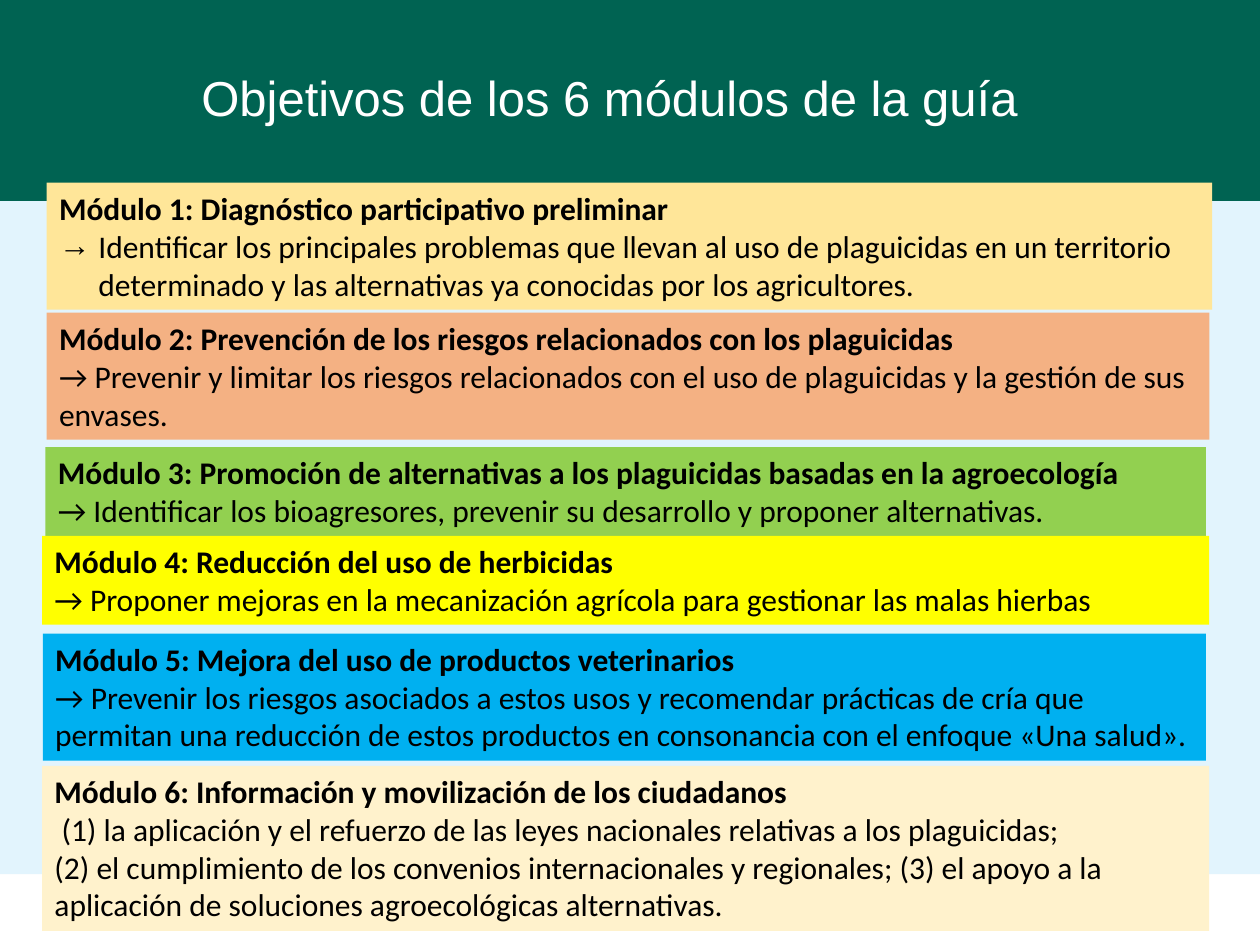
from lxml import etree
from pptx import Presentation
from pptx.dml.color import RGBColor
from pptx.enum.shapes import MSO_SHAPE
from pptx.enum.text import MSO_ANCHOR, MSO_AUTO_SIZE, PP_ALIGN
from pptx.oxml.ns import qn
from pptx.util import Pt

RECTANGLE = MSO_SHAPE.RECTANGLE
TOP, MIDDLE = MSO_ANCHOR.TOP, MSO_ANCHOR.MIDDLE
LEFT, CENTER = PP_ALIGN.LEFT, PP_ALIGN.CENTER
GROW, FIXED = MSO_AUTO_SIZE.SHAPE_TO_FIT_TEXT, MSO_AUTO_SIZE.NONE

TITLE_ONLY = 5
WIDTH, HEIGHT = 720, 540
HEADER_BOTTOM, PANEL_BOTTOM = 114.8, 499.5
LINE_HEIGHT, INSETS = 21.8, 7.2
HANGING = 22.5

COLORS = {
    "panel": "E2F4FD", "header": "006352", "white": "FFFFFF", "black": "000000",
    "sand": "FFE699", "orange": "F4B183", "green": "92D050",
    "yellow": "FFFF00", "blue": "00B0F0", "cream": "FFF2CC",
}

# Fill, left, top, width, number of text lines, heading, body paragraphs, bullet
MODULES = [
    ("sand", 26.64, 104.4, 666, 3, "Módulo 1: Diagnóstico participativo preliminar",
     ["Identificar los principales problemas que llevan al uso de plaguicidas en un "
      "territorio determinado y las alternativas ya conocidas por los agricultores."], "→"),
    ("orange", 26.64, 178.7, 664.4, 3,
     "Módulo 2: Prevención de los riesgos relacionados con los plaguicidas",
     ["→ Prevenir y limitar los riesgos relacionados con el uso de plaguicidas y la "
      "gestión de sus envases."], None),
    ("green", 26, 255.5, 663.1, 2,
     "Módulo 3: Promoción de alternativas a los plaguicidas basadas en la agroecología",
     ["→ Identificar los bioagresores, prevenir su desarrollo y proponer alternativas."],
     None),
    ("yellow", 24, 306.2, 666.9, 2, "Módulo 4: Reducción del uso de herbicidas",
     ["→ Proponer mejoras en la mecanización agrícola para gestionar las malas hierbas"],
     None),
    ("blue", 24.5, 362, 664.6, 3, "Módulo 5: Mejora del uso de productos veterinarios",
     ["→ Prevenir los riesgos asociados a estos usos y recomendar prácticas de cría que "
      "permitan una reducción de estos productos en consonancia con el enfoque "
      "«Una salud»."], None),
    ("cream", 24, 437.6, 666.9, 4, "Módulo 6: Información y movilización de los ciudadanos",
     [" (1) la aplicación y el refuerzo de las leyes nacionales relativas a los plaguicidas;",
      "(2) el cumplimiento de los convenios internacionales y regionales; (3) el apoyo a la "
      "aplicación de soluciones agroecológicas alternativas."], None),
]


def rgb(name):
    return RGBColor.from_string(COLORS[name])


def add_rectangle(page, fill, left, top, width, height):
    box = page.shapes.add_shape(RECTANGLE, Pt(left), Pt(top), Pt(width), Pt(height))
    box.shadow.inherit = False
    box.fill.solid()
    box.fill.fore_color.rgb = rgb(fill)
    box.line.fill.background()
    return box


def add_span(para, text, font, size, color, bold=False):
    span = para.add_run()
    span.text = text
    span.font.name = font
    span.font.size = Pt(size)
    span.font.bold = bold
    span.font.color.rgb = rgb(color)


def set_bullet(para, symbol):
    properties = para._p.get_or_add_pPr()
    properties.set("marL", str(Pt(HANGING)))
    properties.set("indent", str(-Pt(HANGING)))
    etree.SubElement(properties, qn("a:buFont"), typeface="Arial")
    etree.SubElement(properties, qn("a:buChar"), char=symbol)


def fill_title(page):
    title = page.shapes.title
    title.left, title.top, title.width, title.height = Pt(10.8), Pt(20.2), Pt(682.6), Pt(74.2)
    frame = title.text_frame
    frame.vertical_anchor = MIDDLE
    frame.auto_size = FIXED
    para = frame.paragraphs[0]
    para.alignment = CENTER
    para.line_spacing = 0.9
    add_span(para, "Objetivos de los 6 módulos de la guía ", "Arial", 28, "white")
    return title


def add_module(page, fill, left, top, width, lines, heading, body, bullet):
    box = add_rectangle(page, fill, left, top, width, lines * LINE_HEIGHT + INSETS)
    frame = box.text_frame
    frame.word_wrap = True
    frame.auto_size = GROW
    frame.vertical_anchor = TOP
    for index, text in enumerate([heading, *body]):
        para = frame.paragraphs[0] if index == 0 else frame.add_paragraph()
        para.alignment = LEFT
        if bullet and index > 0:
            set_bullet(para, bullet)
        add_span(para, text, "Calibri", 18, "black", bold=index == 0)


def main():
    deck = Presentation()
    deck.slide_width, deck.slide_height = Pt(WIDTH), Pt(HEIGHT)
    page = deck.slides.add_slide(deck.slide_layouts[TITLE_ONLY])

    # Background bands, with the title brought in front of them
    add_rectangle(page, "panel", 0, HEADER_BOTTOM, WIDTH, PANEL_BOTTOM - HEADER_BOTTOM)
    header = add_rectangle(page, "header", 0, 0, WIDTH, HEADER_BOTTOM)
    title = fill_title(page)
    header.element.addnext(title.element)

    # Module boxes
    for module in MODULES:
        add_module(page, *module)

    deck.save("out.pptx")


if __name__ == "__main__":
    main()
